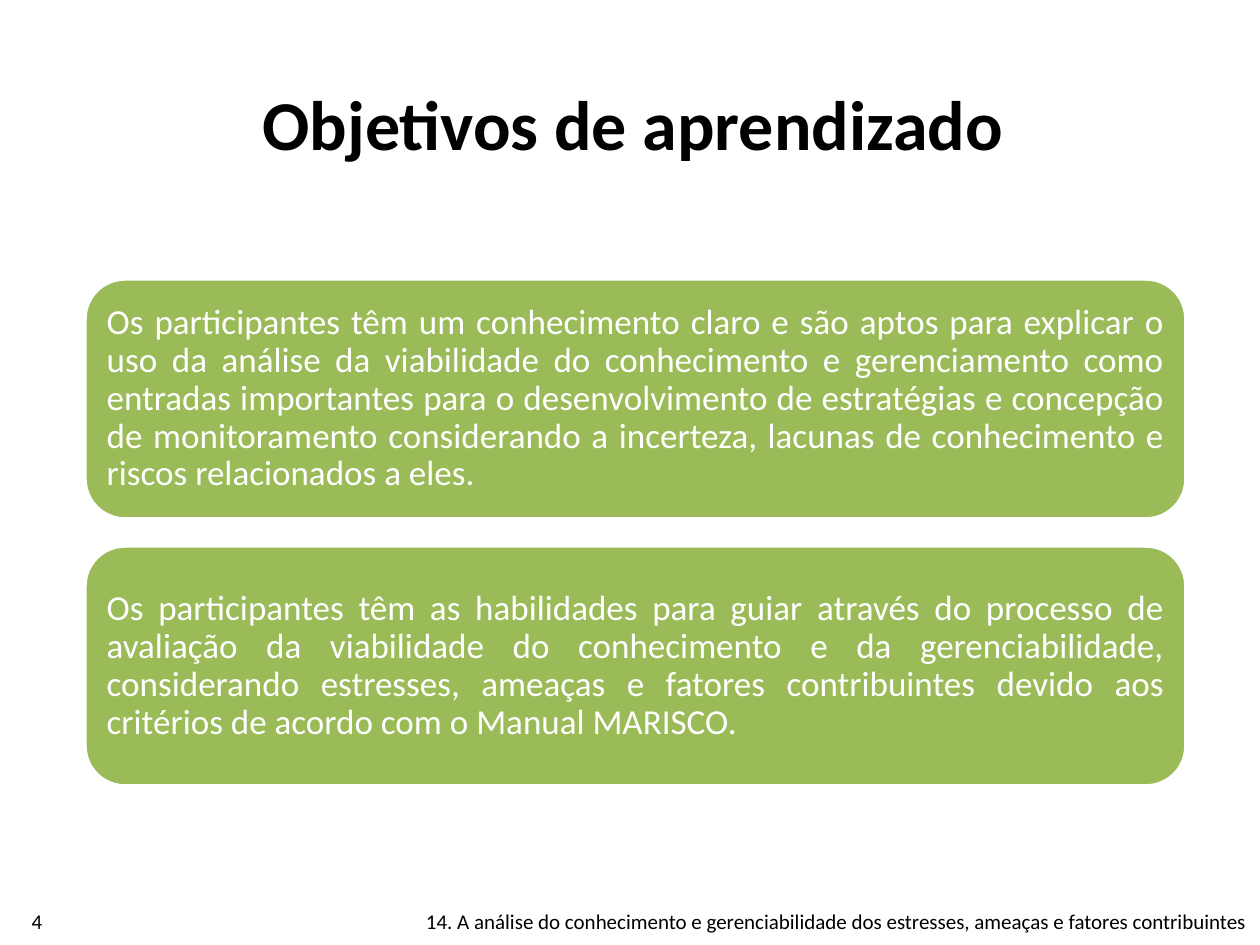
from pptx import Presentation
from pptx.dml.color import RGBColor
from pptx.enum.shapes import MSO_SHAPE as Shape
from pptx.enum.text import MSO_ANCHOR as Anchor, PP_ALIGN as Align
from pptx.util import Pt

PX = 914400 / 126  # EMU per px
THEME = {
    "font": "Calibri",
    "ink": RGBColor(0, 0, 0),
    "paper": RGBColor(255, 255, 255),
    "green": RGBColor(0x9B, 0xBB, 0x59),
    "title": Pt(40),
    "body": Pt(20),
    "footer": Pt(12),
}


def px(*lengths):
    return [round(length * PX) for length in lengths]


def write(box, text, size, color, align, bold=False, margins=(13, 6)):
    frame = box.text_frame
    side, edge = px(*margins)
    frame_format = {
        "word_wrap": True, "vertical_anchor": Anchor.MIDDLE,
        "margin_left": side, "margin_right": side,
        "margin_top": edge, "margin_bottom": edge,
    }
    for name, value in frame_format.items():
        setattr(frame, name, value)
    para = frame.paragraphs[0]
    para.alignment = align
    span = para.add_run()
    span.text = text
    span.font.color.rgb = THEME[color]
    for name, value in {"name": THEME["font"], "size": THEME[size], "bold": bold}.items():
        setattr(span.font, name, value)
    return para


deck = Presentation()
deck.slide_width, deck.slide_height = px(1260, 945)
page = deck.slides.add_slide(deck.slide_layouts[6])

# Title
title = page.shapes.add_textbox(*px(179, 48, 908, 149))
write(title, "Objetivos de aprendizado", "title", "ink", Align.CENTER, bold=True)

# Learning goals
goals = [
    "Os participantes têm um conhecimento claro e são aptos para explicar o uso da "
    "análise da viabilidade do conhecimento e gerenciamento como entradas importantes "
    "para o desenvolvimento de estratégias e concepção de monitoramento considerando a "
    "incerteza, lacunas de conhecimento e riscos relacionados a eles.",
    "Os participantes têm as habilidades para guiar através do processo de avaliação da "
    "viabilidade do conhecimento e da gerenciabilidade, considerando estresses, ameaças "
    "e fatores contribuintes devido aos critérios de acordo com o Manual MARISCO.",
]
for index, goal in enumerate(goals):
    card = page.shapes.add_shape(
        Shape.ROUNDED_RECTANGLE, *px(85, 279 + 267 * index, 1101, 240))
    card.shadow.inherit = False
    card.fill.solid()
    card.fill.fore_color.rgb = THEME["green"]
    card.line.color.rgb = THEME["paper"]
    card.line.width = Pt(2)
    para = write(card, goal, "body", "paper", Align.JUSTIFY, margins=(10, 10))
    para.line_spacing = 0.9

# Footer: page number and chapter
footer = [
    (-1, 76, "4", Align.CENTER),
    (316, 944, "14. A análise do conhecimento e gerenciabilidade dos estresses, "
               "ameaças e fatores contribuintes", Align.RIGHT),
]
for left, width, text, align in footer:
    box = page.shapes.add_textbox(*px(left, 897, width, 48))
    write(box, text, "footer", "ink", align)

deck.save("out.pptx")
